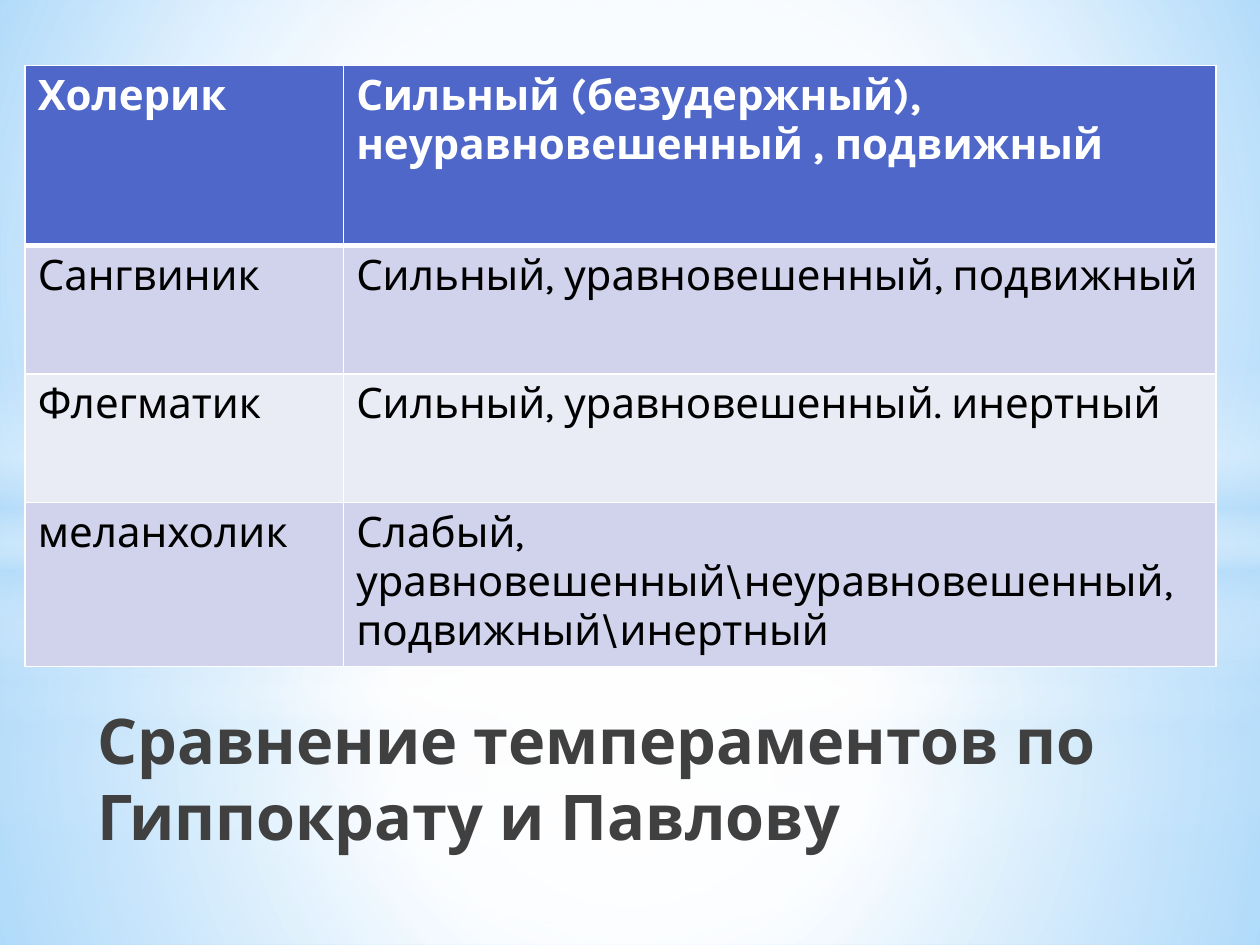
"""Build the slide that compares temperaments after Hippocrates and Pavlov."""
from pptx import Presentation
from pptx import util as u
from pptx.dml.color import RGBColor
from pptx.enum import shapes, text
from pptx.oxml import parse_xml
from pptx.oxml.ns import nsdecls, qn

WHITE, SKY, BLACK, GREY = "FFFFFF", "B4DCFA", "000000", "404040"
HEADER, BAND, PALE = "4E67C8", "D0D3EB", "E9EBF5"
CENTRE = (50, 50, 50, 50)


def color(value):
    return RGBColor.from_string(value)


def apply(target, values):
    for name, value in values.items():
        setattr(target, name, value)


class SlideBuilder:
    def __init__(self, slide, font):
        self.slide = slide
        self.font = font

    def gradient(self, owner, stops, focus=None):
        placeholder = next(owner.iter(qn("a:solidFill")))
        marks = "".join(
            f'<a:gs pos="{pos * 1000}"><a:srgbClr val="{color(value)}">'
            f'<a:alpha val="{alpha * 1000}"/></a:srgbClr></a:gs>'
            for pos, value, alpha in stops)
        if focus:
            sides = " ".join(f'{side}="{share * 1000}"' for side, share in zip("ltrb", focus))
            course = f'<a:path path="circle"><a:fillToRect {sides}/></a:path>'
        else:
            course = '<a:lin ang="5400000" scaled="0"/>'
        fill = parse_xml(f'<a:gradFill {nsdecls("a")} rotWithShape="1">'
                         f'<a:gsLst>{marks}</a:gsLst>{course}</a:gradFill>')
        placeholder.getparent().replace(placeholder, fill)

    def background(self, stops, focus):
        self.slide.background.fill.solid()
        self.slide.background.fill.fore_color.rgb = color(WHITE)
        self.gradient(self.slide.element, stops, focus)

    def glow(self, kind, top, height, stops, focus=None):
        glow = self.slide.shapes.add_shape(kind, 0, u.Pt(top), u.Pt(720), u.Pt(height))
        glow.shadow.inherit = False
        glow.line.fill.background()
        glow.fill.solid()
        glow.fill.fore_color.rgb = color(WHITE)
        self.gradient(glow.element.spPr, stops, focus)

    def wording(self, frame, words, size, ink, bold):
        run = frame.paragraphs[0].add_run()
        run.text = words
        apply(run.font, {"name": self.font, "size": u.Pt(size), "bold": bold})
        run.font.color.rgb = color(ink)

    def title(self, words, left, top, width, height):
        title = self.slide.shapes.add_textbox(*map(u.Pt, (left, top, width, height)))
        apply(title.text_frame, {"word_wrap": True,
                                 "vertical_anchor": text.MSO_ANCHOR.BOTTOM})
        self.wording(title.text_frame, words, 36, GREY, True)

    def borders(self, cell, widths):
        for side, width in widths.items():
            cell._tc.get_or_add_tcPr().append(parse_xml(
                f'<a:ln{side} {nsdecls("a")} w="{u.Pt(width)}"><a:solidFill>'
                f'<a:srgbClr val="{color(WHITE)}"/></a:solidFill></a:ln{side}>'))

    def table(self, rows, left, top, widths, heights):
        table = self.slide.shapes.add_table(
            len(rows), len(widths), u.Pt(left), u.Pt(top),
            u.Pt(sum(widths)), u.Pt(sum(heights))).table
        for column, width in zip(table.columns, widths):
            column.width = u.Pt(width)
        for index, (row, height) in enumerate(zip(rows, heights)):
            table.rows[index].height = u.Pt(height)
            heading = index == 0
            tint = HEADER if heading else (PALE, BAND)[index % 2]
            for cell, words in zip(table.rows[index].cells, row):
                self.borders(cell, {"L": 1, "R": 1, "T": 3 if index == 1 else 1,
                                    "B": 3 if heading else 1})
                cell.fill.solid()
                cell.fill.fore_color.rgb = color(tint)
                self.wording(cell.text_frame, words, 24,
                             WHITE if heading else BLACK, heading)


TEMPERAMENTS = [
    ("Холерик", "Сильный (безудержный), неуравновешенный , подвижный"),
    ("Сангвиник", "Сильный, уравновешенный, подвижный"),
    ("Флегматик", "Сильный, уравновешенный. инертный"),
    ("меланхолик", "Слабый, уравновешенный\\неуравновешенный, подвижный\\инертный"),
]
HORIZON = [(0, WHITE, 0), (29, WHITE, 30), (45, SKY, 40),
           (55, WHITE, 26), (65, SKY, 60), (100, WHITE, 0)]


def main():
    deck = Presentation()
    apply(deck, {"slide_width": u.Pt(720), "slide_height": u.Pt(540)})
    builder = SlideBuilder(deck.slides.add_slide(deck.slide_layouts[6]), "Karla")
    builder.background([(0, "9ED5FF", 100), (60, WHITE, 100), (100, "5BB9FF", 100)],
                       (20, 10, 20, 60))
    rectangle, oval = shapes.MSO_SHAPE.RECTANGLE, shapes.MSO_SHAPE.OVAL
    for split, horizon, extra, core in ((402, 297, 0, 56), (304.5, 209, 1, 54)):
        ground = [(0, WHITE, 91 + extra), (37, WHITE, 76 + extra), (100, SKY, 79 + extra)]
        sky = [(0, WHITE, 89 + extra), (48, WHITE, 62 + extra), (100, SKY, 79 + extra)]
        builder.glow(rectangle, split, 540 - split, ground, CENTRE)
        builder.glow(rectangle, 0, split, sky, CENTRE)
        builder.glow(rectangle, horizon, 180, HORIZON)
        builder.glow(oval, 126, 402, [(0, WHITE, 100), (core, WHITE, 0)], CENTRE)
    builder.title("Сравнение темпераментов по Гиппократу и Павлову", 48.5, 49, 652, 442)
    builder.table(TEMPERAMENTS, 14.4, 37.4, (182, 498.4), (103, 73.4, 73.4, 91))
    deck.save("out.pptx")


if __name__ == "__main__":
    main()
